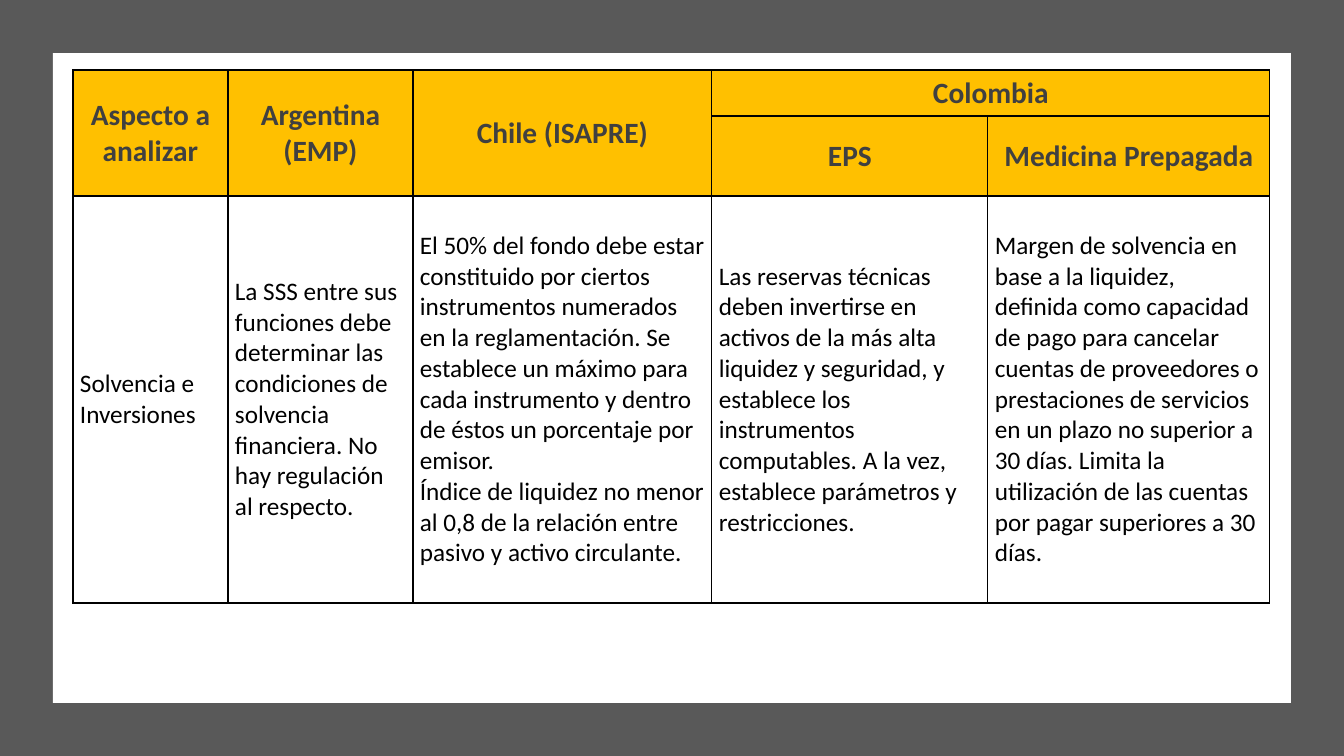
from lxml.etree import SubElement
from pptx import Presentation
from pptx.dml.color import RGBColor
from pptx.enum.shapes import MSO_SHAPE
from pptx.enum.text import MSO_ANCHOR, PP_ALIGN
from pptx.oxml.ns import qn
from pptx.util import Emu, Pt

SCALE = 914400 / 100.8
COLORS = {
    "frame": "595959",
    "panel": "FFFFFF",
    "header": "FFC000",
    "header_text": "404040",
    "text": "000000",
    "border": "000000",
}
COLUMNS = [155, 185, 299, 276, 282]
ROWS = [46, 80, 407]
HEADERS = {
    (0, 0): "Aspecto a analizar",
    (0, 1): "Argentina (EMP)",
    (0, 2): "Chile (ISAPRE)",
    (0, 3): "Colombia",
    (1, 3): "EPS",
    (1, 4): "Medicina Prepagada",
}
BODY = [
    "Solvencia e Inversiones",
    "La SSS entre sus funciones debe determinar las condiciones de solvencia "
    "financiera. No hay regulación al respecto.",
    "El 50% del fondo debe estar constituido por ciertos instrumentos numerados "
    "en la reglamentación. Se establece un máximo para cada instrumento y dentro "
    "de éstos un porcentaje por emisor.\n"
    "Índice de liquidez no menor al 0,8 de la relación entre pasivo y activo "
    "circulante.",
    "Las reservas técnicas deben invertirse en activos de la más alta liquidez y "
    "seguridad, y establece los instrumentos computables. A la vez, establece "
    "parámetros y restricciones.",
    "Margen de solvencia en base a la liquidez, definida como capacidad de pago "
    "para cancelar cuentas de proveedores o prestaciones de servicios en un plazo "
    "no superior a 30 días. Limita la utilización de las cuentas por pagar "
    "superiores a 30 días.",
]
HEADER_FONT = {"name": "Calibri", "size": Pt(21), "bold": True}
BODY_FONT = {"name": "Calibri", "size": Pt(18), "bold": False}


def px(n):
    """Turn pixels into EMU."""
    return Emu(round(n * SCALE))


def rgb(name):
    """Look up a named colour."""
    return RGBColor.from_string(COLORS[name])


def add_rect(s, box, color):
    """Fill a box with a plain rectangle."""
    sp = s.shapes.add_shape(MSO_SHAPE.RECTANGLE, *map(px, box))
    sp.shadow.inherit = False
    sp.fill.solid()
    sp.fill.fore_color.rgb = rgb(color)
    sp.line.fill.background()


def add_borders(cell):
    """Draw a thin line on all four sides of a cell."""
    tcPr = cell._tc.get_or_add_tcPr()
    for side in ("a:lnL", "a:lnR", "a:lnT", "a:lnB"):
        ln = SubElement(tcPr, qn(side), w=str(Pt(1)))
        fill = SubElement(ln, qn("a:solidFill"))
        SubElement(fill, qn("a:srgbClr"), val=COLORS["border"])


def style_cell(cell, is_header):
    """Set the margins, borders and fill of a cell."""
    layout = {
        "margin_left": px(7),
        "margin_right": px(7),
        "margin_top": px(4),
        "margin_bottom": px(4),
        "vertical_anchor": MSO_ANCHOR.MIDDLE,
    }
    for name, value in layout.items():
        setattr(cell, name, value)
    add_borders(cell)
    if is_header:
        cell.fill.solid()
        cell.fill.fore_color.rgb = rgb("header")
    else:
        cell.fill.background()


def write_cell(cell, text, font, color, align):
    """Write formatted paragraphs into a cell."""
    cell.text = text
    for p in cell.text_frame.paragraphs:
        p.alignment = align
        for r in p.runs:
            for name, value in font.items():
                setattr(r.font, name, value)
            r.font.color.rgb = rgb(color)


def add_comparison(s, left, top):
    """Place the country comparison table at a corner."""
    size = px(sum(COLUMNS)), px(sum(ROWS))
    frame = s.shapes.add_table(len(ROWS), len(COLUMNS), px(left), px(top), *size)
    table = frame.table
    table.first_row = table.horz_banding = False
    for column, width in zip(table.columns, COLUMNS):
        column.width = px(width)
    for i, (row, height) in enumerate(zip(table.rows, ROWS)):
        row.height = px(height)
        for cell in row.cells:
            style_cell(cell, i < 2)
    for col in range(3):
        table.cell(0, col).merge(table.cell(1, col))
    table.cell(0, 3).merge(table.cell(0, 4))
    for (row, col), text in HEADERS.items():
        write_cell(table.cell(row, col), text, HEADER_FONT, "header_text", PP_ALIGN.CENTER)
    for col, text in enumerate(BODY):
        write_cell(table.cell(2, col), text, BODY_FONT, "text", PP_ALIGN.LEFT)


def add_table_slide(prs, width, height):
    """Build the framed slide with its comparison table."""
    s = prs.slides.add_slide(prs.slide_layouts[6])
    margin = 53
    add_rect(s, (0, 0, width, height), "frame")
    add_rect(s, (margin, margin, width - 2 * margin, height - 2 * margin), "panel")
    add_comparison(s, margin + 20, margin + 17)


def main():
    """Create and save the presentation."""
    width, height = 1344, 756
    prs = Presentation()
    prs.slide_width, prs.slide_height = px(width), px(height)
    add_table_slide(prs, width, height)
    prs.save("out.pptx")


if __name__ == "__main__":
    main()
